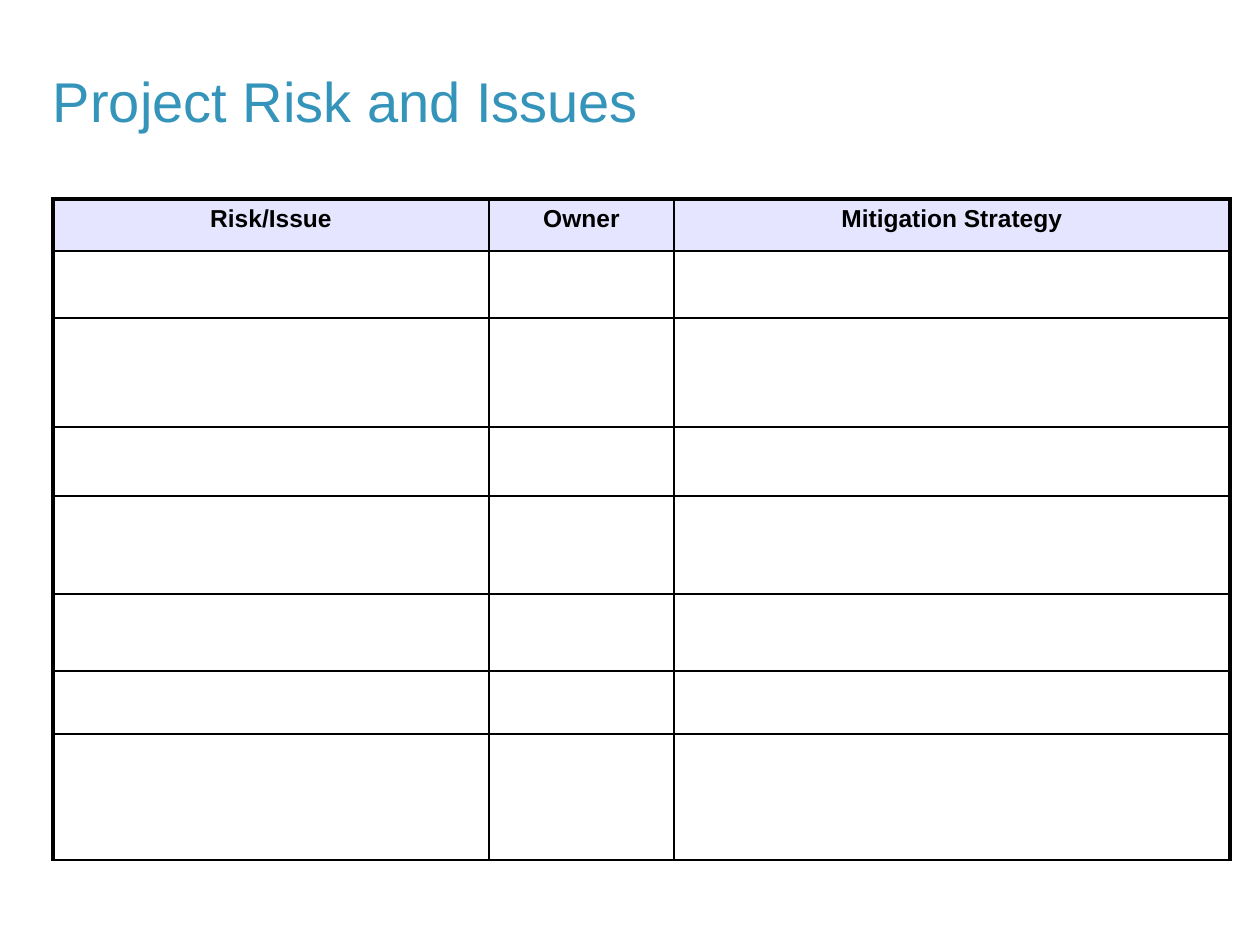
from lxml.etree import SubElement
from pptx import Presentation
from pptx.dml.color import RGBColor
from pptx.enum.text import MSO_ANCHOR, PP_ALIGN
from pptx.oxml.ns import qn
from pptx.util import Pt

PX = 914400 // 126
HEADINGS = ["Risk/Issue", "Owner", "Mitigation Strategy"]
COLUMN_WIDTHS = [436, 185, 556]
ROW_HEIGHTS = [52, 67, 109, 69, 98, 77, 63, 126]
THIN, THICK = 1, 2.25


def color(hex_code):
    return RGBColor.from_string(hex_code)


def add_border(cell, side, width):
    line = SubElement(cell._tc.get_or_add_tcPr(), qn(f"a:ln{side}"), w=str(Pt(width)))
    fill = SubElement(line, qn("a:solidFill"))
    SubElement(fill, qn("a:srgbClr"), val="000000")


prs = Presentation()
prs.slide_width, prs.slide_height = 1260 * PX, 945 * PX
slide = prs.slides.add_slide(prs.slide_layouts[5])

title = slide.shapes.title
title.left, title.top, title.width, title.height = 53 * PX, 21 * PX, 1163 * PX, 158 * PX
frame = title.text_frame
frame.margin_left = frame.margin_right = frame.margin_top = frame.margin_bottom = 0
frame.vertical_anchor = MSO_ANCHOR.MIDDLE
frame.paragraphs[0].alignment = PP_ALIGN.LEFT
run = frame.paragraphs[0].add_run()
run.text = "Project Risk and Issues"
run.font.name, run.font.size = "Arial", Pt(32)
run.font.color.rgb = color("3494BA")

risks = slide.shapes.add_table(
    len(ROW_HEIGHTS), len(HEADINGS), 53 * PX, 199 * PX,
    sum(COLUMN_WIDTHS) * PX, sum(ROW_HEIGHTS) * PX,
).table
risks.first_row = risks.horz_banding = False
for column, width in zip(risks.columns, COLUMN_WIDTHS):
    column.width = width * PX
for row, height in zip(risks.rows, ROW_HEIGHTS):
    row.height = height * PX

last_column = len(HEADINGS) - 1
for r in range(len(ROW_HEIGHTS)):
    for c in range(len(HEADINGS)):
        cell = risks.cell(r, c)
        add_border(cell, "L", THICK if c == 0 else THIN)
        add_border(cell, "R", THICK if c == last_column else THIN)
        add_border(cell, "T", THICK if r == 0 else THIN)
        add_border(cell, "B", THIN)
        cell.fill.background()

for c, heading in enumerate(HEADINGS):
    cell = risks.cell(0, c)
    cell.fill.solid()
    cell.fill.fore_color.rgb = color("CCCCFF")
    tint = cell._tc.tcPr.find(qn("a:solidFill")).find(qn("a:srgbClr"))
    SubElement(tint, qn("a:alpha"), val="50000")
    paragraph = cell.text_frame.paragraphs[0]
    paragraph.alignment = PP_ALIGN.CENTER
    run = paragraph.add_run()
    run.text = heading
    run.font.name, run.font.size, run.font.bold = "Arial", Pt(14), True
    run.font.color.rgb = color("000000")

prs.save("out.pptx")
